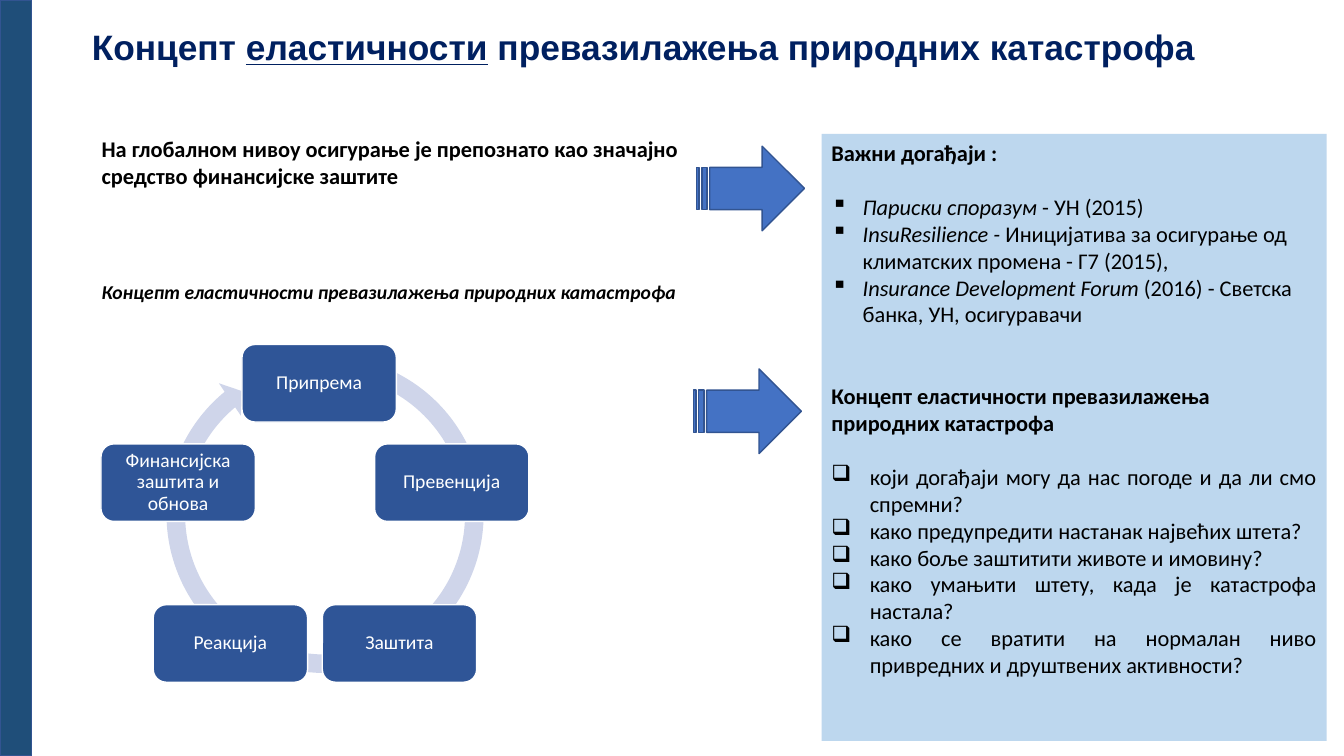
from dataclasses import dataclass
from math import cos, radians, sin

from lxml import etree
from pptx import Presentation
from pptx import util as u
from pptx.dml.color import RGBColor
from pptx.enum import shapes, text
from pptx.oxml.ns import qn

COLUMNS, ROWS = 64, 36


@dataclass(frozen=True)
class Theme:
    heading_font: str = "Arial"
    body_font: str = "Calibri"
    title_size: float = 25.2
    body_size: float = 16
    small_size: float = 14
    body_line: float = 19.5
    navy: str = "002060"
    black: str = "000000"
    white: str = "FFFFFF"
    bar: str = "1F4E79"
    outline: str = "325491"
    arrow: str = "4472C4"
    node: str = "2F5597"
    ring: str = "CFD5EA"
    panel: str = "BDD7EE"


class Page:
    def __init__(self, deck, theme):
        self.theme = theme
        self.slide = deck.slides.add_slide(deck.slide_layouts[5])
        self.column = deck.slide_width / COLUMNS
        self.row = deck.slide_height / ROWS

    def box(self, left, top, width, height):
        return (u.Emu(round(left * self.column)), u.Emu(round(top * self.row)),
                u.Emu(round(width * self.column)), u.Emu(round(height * self.row)))

    def style(self, paragraph, size, color, bold=None, italic=None, font=None):
        face = paragraph.font
        face.name, face.size = font or self.theme.body_font, u.Pt(size)
        face.bold, face.italic = bold, italic
        face.color.rgb = RGBColor.from_string(color)

    def title(self, before, underlined, after, *place):
        heading = self.slide.shapes.title
        heading.left, heading.top, heading.width, heading.height = self.box(*place)
        heading.text_frame.vertical_anchor = text.MSO_ANCHOR.MIDDLE
        paragraph = heading.text_frame.paragraphs[0]
        paragraph.alignment, paragraph.line_spacing = text.PP_ALIGN.LEFT, 0.9
        for words in (before, underlined, after):
            run = paragraph.add_run()
            run.text = words
            run.font.underline = words == underlined
        self.style(paragraph, self.theme.title_size, self.theme.navy, True,
                   font=self.theme.heading_font)

    def shape(self, kind, fill, *place, line=None, adjustments=()):
        figure = self.slide.shapes.add_shape(kind, *self.box(*place))
        figure.shadow.inherit = False
        figure.fill.solid()
        figure.fill.fore_color.rgb = RGBColor.from_string(fill)
        if line:
            figure.line.color.rgb = RGBColor.from_string(line)
            figure.line.width = u.Pt(1)
        else:
            figure.line.fill.background()
        for index, value in enumerate(adjustments):
            figure.adjustments[index] = value
        return figure

    def node(self, label, center_x, center_y, width, height):
        card = self.shape(shapes.MSO_SHAPE.ROUNDED_RECTANGLE, self.theme.node,
                          center_x - width / 2, center_y - height / 2, width, height,
                          line=self.theme.white)
        frame = card.text_frame
        frame.margin_left = frame.margin_right = u.Inches(0.05)
        frame.margin_top = frame.margin_bottom = u.Inches(0.05)
        paragraph = frame.paragraphs[0]
        paragraph.text, paragraph.line_spacing = label, 0.9
        paragraph.alignment = text.PP_ALIGN.CENTER
        self.style(paragraph, self.theme.small_size, self.theme.white)

    def caption(self, words, size, *place, italic=None):
        frame = self.slide.shapes.add_textbox(*self.box(*place)).text_frame
        frame.word_wrap = True
        frame.paragraphs[0].text = words
        self.style(frame.paragraphs[0], size, self.theme.black, True, italic)

    def panel(self, entries, *place):
        frame = self.shape(shapes.MSO_SHAPE.RECTANGLE, self.theme.panel, *place).text_frame
        frame.word_wrap = True
        frame.vertical_anchor = text.MSO_ANCHOR.TOP
        for index, (lead, words, bullet, indent, skipped) in enumerate(entries):
            paragraph = frame.add_paragraph() if index else frame.paragraphs[0]
            justified = bullet == "❑"
            paragraph.alignment = text.PP_ALIGN.JUSTIFY if justified else text.PP_ALIGN.LEFT
            paragraph.space_before = u.Pt(skipped * self.theme.body_line)
            if bullet:
                properties = paragraph.runs and None or paragraph._p.get_or_add_pPr()
                properties.set("marL", str(u.Inches(indent)))
                properties.set("indent", str(-u.Inches(indent)))
                etree.SubElement(properties, qn("a:buChar")).set("char", bullet)
            if lead:
                run = paragraph.add_run()
                run.text, run.font.italic = lead, True
            paragraph.add_run().text = words
            self.style(paragraph, self.theme.body_size, self.theme.black, not bullet)


EVENTS = [
    ("Париски споразум ", "- УН (2015)"),
    ("InsuResilience - ", "Иницијатива за осигурање од климатских промена - Г7 (2015),"),
    ("Insurance Development Forum ", "(2016) - Светска банка, УН, осигуравачи"),
]
QUESTIONS = [
    "који догађаји могу да нас погоде и да ли смо спремни?",
    "како предупредити настанак највећих штета?",
    "како боље заштитити животе и имовину?",
    "како умањити штету, када је катастрофа настала?",
    "како се вратити на нормалан ниво привредних и друштвених активности?",
]
STAGES = ["Припрема", "Превенција", "Заштита", "Реакција", "Финансијска заштита и обнова"]
CONCEPT = "Концепт еластичности превазилажења природних катастрофа"


def main():
    deck = Presentation()
    deck.slide_width, deck.slide_height = u.Inches(13.33), u.Inches(7.5)
    theme = Theme()
    page = Page(deck, theme)

    page.title("Концепт ", "еластичности", " превазилажења природних катастрофа",
               3.89, 0.6, 55.2, 3.5)

    page.shape(shapes.MSO_SHAPE.CIRCULAR_ARROW, theme.ring, 7.44, 16.46, 16.08, 16.08,
               adjustments=(0.055, 3.307, 138.232, 173.573, 0.058))
    cycle_x, cycle_y, radius = 15, 25.1, 6.85
    for index, stage in enumerate(STAGES):
        angle = radians(index * 360 / len(STAGES))
        nudge = 0 if index else 0.2
        page.node(stage, cycle_x + nudge + radius * sin(angle),
                  cycle_y - radius * cos(angle), 7.35, 3.69)

    page.shape(shapes.MSO_SHAPE.RECTANGLE, theme.bar, 0, 0, 1.5, ROWS, line=theme.outline)
    page.caption("На глобалном нивоу осигурање је препознато као значајно "
                 "средство финансијске заштите", theme.body_size, 4.37, 6.22, 28.8, 3.2)
    page.caption(CONCEPT, theme.small_size, 4.37, 13.1, 29.42, 1.63, italic=True)

    entries = [("", "Важни догађаји :", "", 0, 0)]
    entries += [(name, details, "▪", 0.31, int(index == 0))
                for index, (name, details) in enumerate(EVENTS)]
    entries.append(("", CONCEPT, "", 0, 2))
    entries += [("", question, "❑", 0.38, int(index == 0))
                for index, question in enumerate(QUESTIONS)]
    page.panel(entries, 39.12, 6.38, 24.05, 28.9)

    for left, top in ((33.17, 6.96), (33.02, 17.57)):
        page.shape(shapes.MSO_SHAPE.STRIPED_RIGHT_ARROW, theme.arrow, left, top, 5.14, 4.03,
                   line=theme.outline)

    deck.save("out.pptx")


if __name__ == "__main__":
    main()
